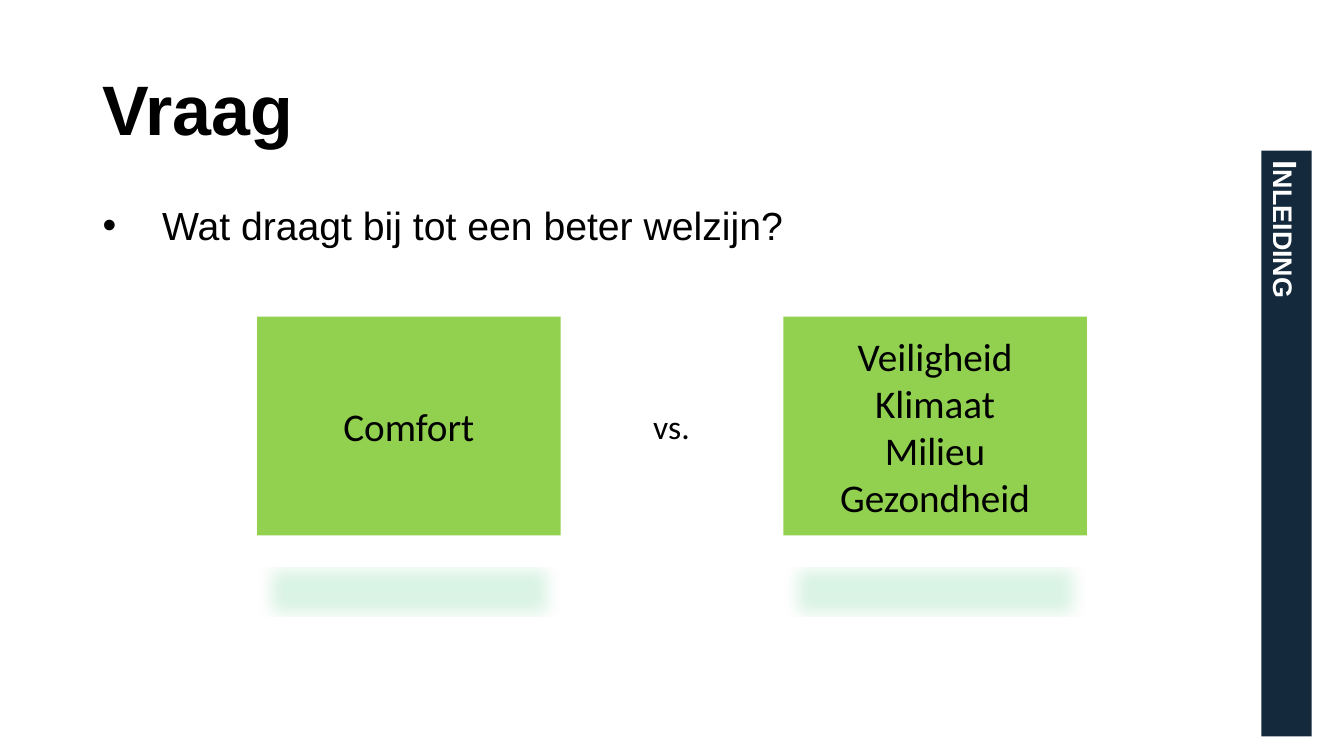
from lxml import etree
from pptx import Presentation
from pptx.dml.color import RGBColor
from pptx.enum import shapes, text
from pptx.oxml import ns
from pptx import util as u

COLOURS = {"ink": "000000", "paper": "FFFFFF", "box": "92D050", "shadow": "00B050", "bar": "14293C"}


class SlideBuilder:
    """Hold the style and the current slide, with one method per kind of element."""

    heading_font = "Arial"
    box_font = "Calibri"

    def __init__(self, presentation):
        self.slide = presentation.slides.add_slide(presentation.slide_layouts[1])

    def colour(self, name):
        return RGBColor.from_string(COLOURS[name])

    def place(self, shape, left, top, width, height):
        shape.left, shape.top = u.Cm(left), u.Cm(top)
        shape.width, shape.height = u.Cm(width), u.Cm(height)

    def set_text(self, shape, lines, size, font, colour="ink", bold=False,
                 align=text.PP_ALIGN.LEFT, anchor=text.MSO_ANCHOR.MIDDLE):
        frame = shape.text_frame
        frame.word_wrap = True
        frame.auto_size = text.MSO_AUTO_SIZE.NONE
        frame.vertical_anchor = anchor
        paragraph = frame.paragraphs[0]
        paragraph.alignment = align
        for number, line in enumerate(lines):
            if number:
                paragraph.add_line_break()
            run = paragraph.add_run()
            run.text = line
            run.font.size = u.Pt(size)
            run.font.name = font
            run.font.bold = bold
            run.font.color.rgb = self.colour(colour)
        return paragraph

    def title(self, line):
        shape = self.slide.shapes.title
        self.place(shape, 2.33, 1.01, 28.63, 3.68)
        self.set_text(shape, [line], 50, self.heading_font, bold=True).line_spacing = 0.9

    def bullet(self, line):
        shape = self.slide.placeholders[1]
        self.place(shape, 2.33, 5.07, 28.63, 12.09)
        paragraph = self.set_text(shape, [line], 28, self.heading_font, anchor=text.MSO_ANCHOR.TOP)
        paragraph.line_spacing = 0.9
        paragraph.space_before = u.Pt(0)
        properties = paragraph._p.get_or_add_pPr()
        properties.set("marL", str(u.Cm(1.5)))
        properties.set("indent", str(u.Cm(-1.5)))
        etree.SubElement(properties, ns.qn("a:buFont"), typeface="Arial")
        etree.SubElement(properties, ns.qn("a:buChar"), char="•")

    def rectangle(self, left, top, width, height, fill):
        shape = self.slide.shapes.add_shape(
            shapes.MSO_SHAPE.RECTANGLE, u.Cm(left), u.Cm(top), u.Cm(width), u.Cm(height))
        shape.shadow.inherit = False
        shape.fill.solid()
        shape.fill.fore_color.rgb = self.colour(fill)
        shape.line.fill.background()
        return shape

    def box(self, left, lines):
        shape = self.rectangle(left, 7.98, 7.65, 5.51, "box")
        self.set_text(shape, lines, 28, self.box_font, align=text.PP_ALIGN.CENTER)
        effects = shape._element.spPr.find(ns.qn("a:effectLst"))
        shadow = etree.SubElement(
            effects, ns.qn("a:outerShdw"), blurRad=str(u.Pt(12)), dist=str(u.Pt(25)),
            dir="5400000", sx="90000", sy="-19000", rotWithShape="0")
        tint = etree.SubElement(shadow, ns.qn("a:srgbClr"), val=COLOURS["shadow"])
        etree.SubElement(tint, ns.qn("a:alpha"), val="15000")

    def section_bar(self, line):
        shape = self.rectangle(25.04, 10.54, 14.76, 1.27, "bar")
        shape.rotation = 90
        paragraph = self.set_text(shape, [line], 24, self.heading_font, "paper", bold=True)
        paragraph.runs[0].font._element.set("cap", "small")

    def label(self, line):
        shape = self.slide.shapes.add_textbox(u.Cm(15.44), u.Cm(10.11), u.Cm(2.97), u.Cm(1.27))
        self.set_text(shape, [line], 24, self.box_font,
                      align=text.PP_ALIGN.CENTER, anchor=text.MSO_ANCHOR.TOP)
        shape.text_frame.auto_size = text.MSO_AUTO_SIZE.SHAPE_TO_FIT_TEXT


def main():
    presentation = Presentation()
    presentation.slide_width, presentation.slide_height = u.Cm(33.87), u.Cm(19.05)
    builder = SlideBuilder(presentation)
    builder.title("Vraag")
    builder.bullet("Wat draagt bij tot een beter welzijn?")
    builder.box(19.74, ["Veiligheid", "Klimaat", "Milieu Gezondheid"])
    builder.box(6.48, ["Comfort"])
    builder.section_bar("Inleiding")
    builder.label("vs.")
    presentation.save("out.pptx")


if __name__ == "__main__":
    main()
